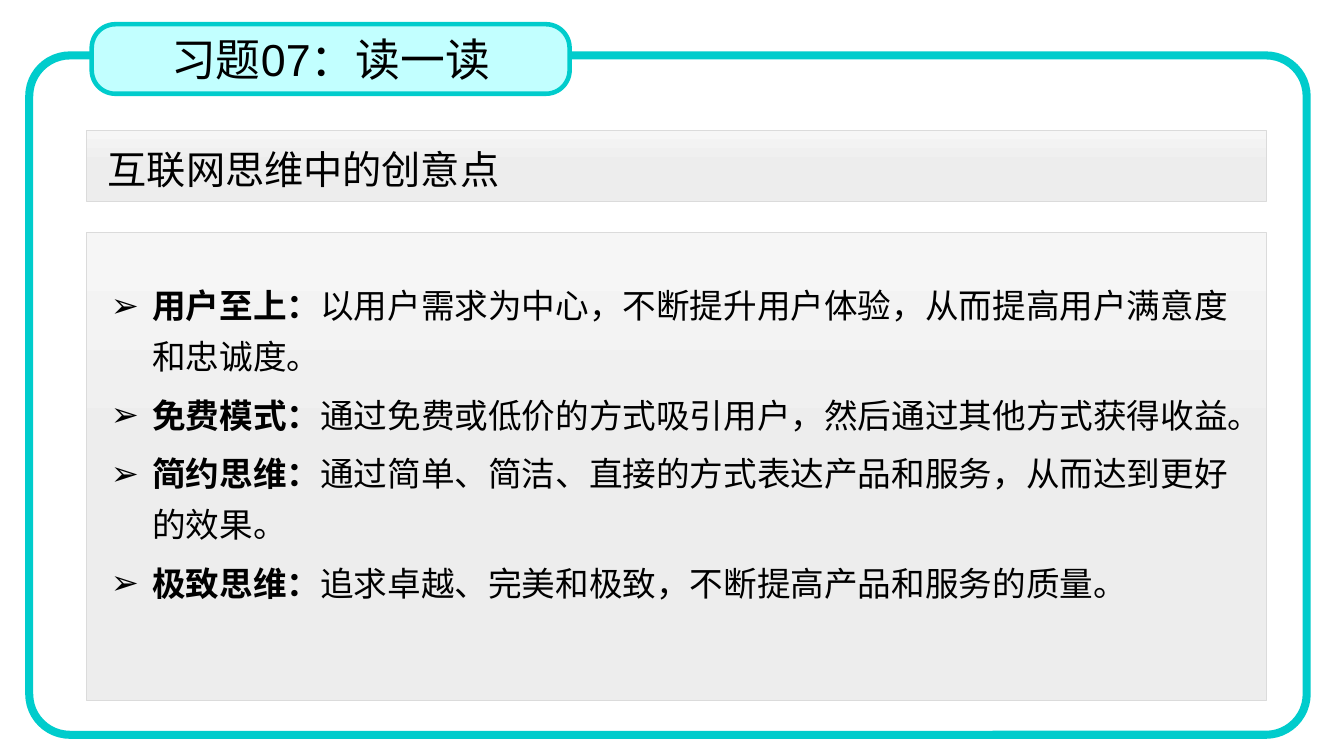
from copy import deepcopy

from lxml.etree import SubElement
from pptx import Presentation
from pptx.dml.color import RGBColor
from pptx.enum.shapes import MSO_SHAPE
from pptx.enum.text import MSO_ANCHOR, MSO_AUTO_SIZE, PP_ALIGN
from pptx.oxml.ns import qn
from pptx.util import Pt

PX = 9144
TEAL = RGBColor(0x00, 0xCC, 0xCC)
PALE_CYAN = RGBColor(0xC2, 0xFF, 0xFF)
BORDER_GREY = RGBColor(0xDB, 0xDB, 0xDB)
PANEL_GREYS = [
    RGBColor(0xF6, 0xF6, 0xF6),
    RGBColor(0xED, 0xED, 0xED),
    RGBColor(0xEB, 0xEB, 0xEB),
]
BLACK = RGBColor(0x00, 0x00, 0x00)
CJK_FONT = "Noto Sans CJK SC"

POINTS = [
    ("用户至上：", "以用户需求为中心，不断提升用户体验，从而提高用户满意度和忠诚度。"),
    ("免费模式：", "通过免费或低价的方式吸引用户，然后通过其他方式获得收益。"),
    ("简约思维：", "通过简单、简洁、直接的方式表达产品和服务，从而达到更好的效果。"),
    ("极致思维：", "追求卓越、完美和极致，不断提高产品和服务的质量。"),
]


def px(*lengths):
    return [length * PX for length in lengths]


def place(shape, left, top, width, height):
    shape.left, shape.top, shape.width, shape.height = px(left, top, width, height)


def style_font(para, size, name=CJK_FONT):
    font = para.font
    font.size, font.name = Pt(size), name
    font.color.rgb = BLACK
    SubElement(font._element, qn("a:ea"), typeface=CJK_FONT)


def add_outlined(page, kind, box, color, weight):
    shape = page.shapes.add_shape(kind, *px(*box))
    shape.shadow.inherit = False
    shape.line.color.rgb = color
    shape.line.width = Pt(weight)
    return shape


def add_panel(page, box):
    panel = add_outlined(page, MSO_SHAPE.RECTANGLE, box, BORDER_GREY, 0.5)
    panel.fill.gradient()
    panel.fill.gradient_angle = 270
    stop_list = panel._element.spPr.find(qn("a:gradFill")).find(qn("a:gsLst"))
    stop_list.insert(1, deepcopy(stop_list[0]))
    for index, (stop, grey) in enumerate(zip(panel.fill.gradient_stops, PANEL_GREYS)):
        stop.color.rgb = grey
        stop.position = index / 2


def add_frame(page, box):
    frame = add_outlined(page, MSO_SHAPE.ROUNDED_RECTANGLE, box, TEAL, 5.75)
    frame.adjustments[0] = 0.06
    frame.fill.background()


def bring_to_front(page, shape):
    page.shapes._spTree.append(shape._element)


def add_title_tab(page, box, wording):
    tab = add_outlined(page, MSO_SHAPE.ROUNDED_RECTANGLE, box, TEAL, 3.25)
    tab.adjustments[0] = 0.34
    tab.fill.solid()
    tab.fill.fore_color.rgb = PALE_CYAN
    title = page.shapes.title
    place(title, *box)
    bring_to_front(page, title)
    frame = title.text_frame
    frame.text = wording
    frame.auto_size = MSO_AUTO_SIZE.NONE
    frame.vertical_anchor = MSO_ANCHOR.MIDDLE
    para = frame.paragraphs[0]
    para.alignment = PP_ALIGN.CENTER
    style_font(para, 32, "Arial")


def add_heading(page, box, wording):
    left, top, width, height = box
    add_panel(page, box)
    heading = page.shapes.add_textbox(*px(left + 11, top - 13, width - 11, height + 10))
    heading.text_frame.word_wrap = True
    para = heading.text_frame.paragraphs[0]
    para.text = wording
    para.line_spacing = 1.5
    style_font(para, 28)


def set_bullet(para):
    properties = para._p.get_or_add_pPr()
    properties.set("marL", str(68 * PX))
    properties.set("indent", str(-41 * PX))
    bullet = SubElement(properties, qn("a:buChar"), char="➢")
    return bullet


def add_points(page, box, points):
    left, top, width, height = box
    add_panel(page, box)
    body = page.placeholders[1]
    place(body, left - 13, top + 37, width - 11, height - 126)
    bring_to_front(page, body)
    frame = body.text_frame
    frame.auto_size = MSO_AUTO_SIZE.NONE
    frame.vertical_anchor = MSO_ANCHOR.TOP
    for index, (term, meaning) in enumerate(points):
        para = frame.add_paragraph() if index else frame.paragraphs[0]
        para.alignment = PP_ALIGN.LEFT
        para.line_spacing = 1.25
        para.space_before = Pt(6)
        para.space_after = Pt(0)
        set_bullet(para)
        style_font(para, 24)
        for wording, bold in ((term, True), (meaning, False)):
            span = para.add_run()
            span.text = wording
            span.font.bold = bold


def main():
    deck = Presentation()
    deck.slide_width, deck.slide_height = px(1333, 750)
    page = deck.slides.add_slide(deck.slide_layouts[1])
    add_frame(page, (29, 55, 1267, 674))
    add_title_tab(page, (91, 24, 474, 69), "习题07：读一读")
    add_heading(page, (86, 129, 1170, 71), "互联网思维中的创意点")
    add_points(page, (86, 231, 1170, 464), POINTS)
    deck.save("out.pptx")


if __name__ == "__main__":
    main()
